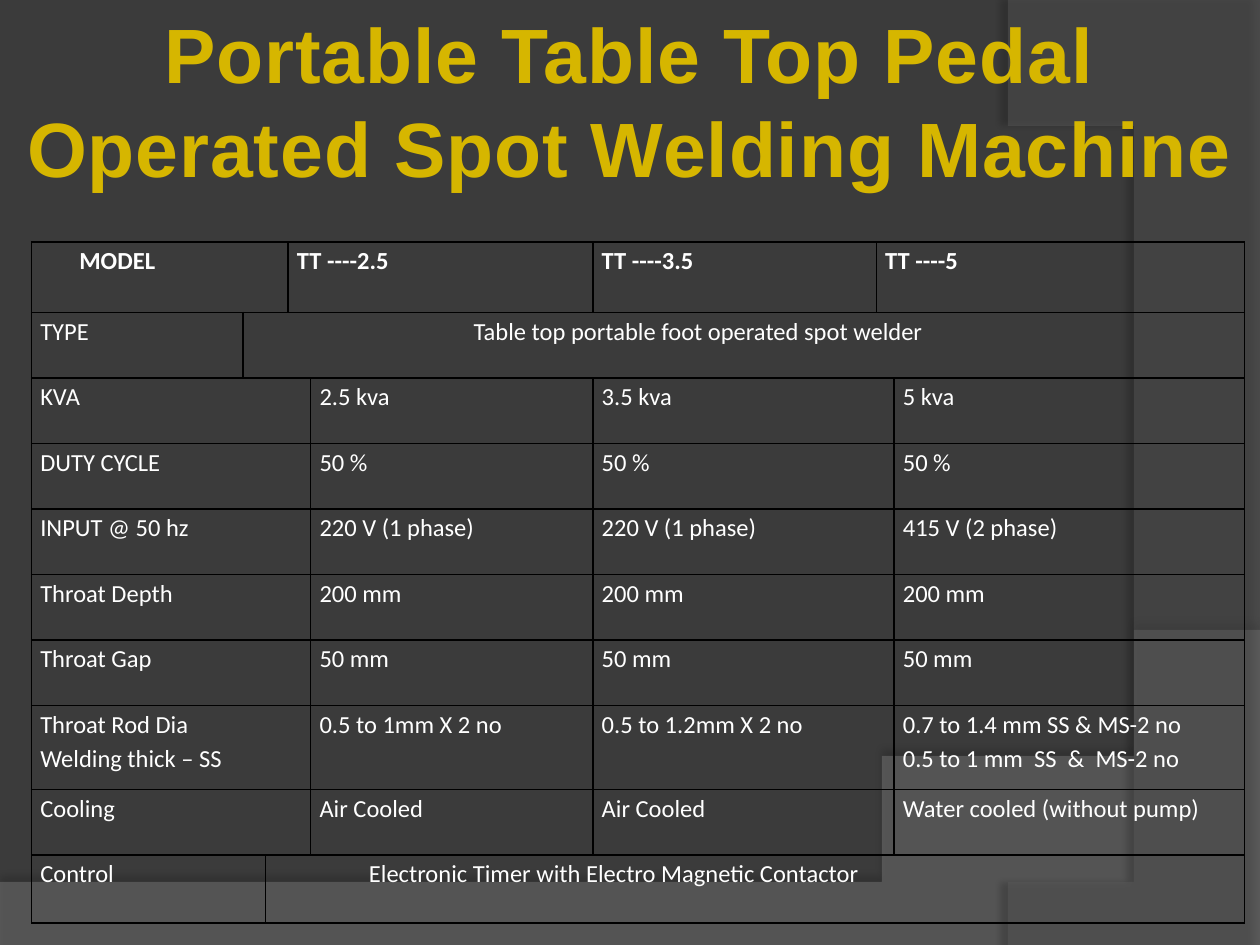
import lxml.etree
import pptx
import pptx.dml.color
import pptx.enum.text
import pptx.oxml
import pptx.oxml.ns
import pptx.util

Inches = pptx.util.Inches
Pt = pptx.util.Pt

COLORS = {
    "background": "3B3B3B",
    "wave": "7F7F7F",
    "arc": "5E5E5E",
    "title_top": "D6B600",
    "title_bottom": "978100",
    "text": "FFFFFF",
    "line": "000000",
}

COLUMN_WIDTHS = [1.68, 0.14, 0.14, 0.14, 2.24, 2.25, 0.14, 2.78]
ROW_HEIGHTS = [0.56] + [0.52] * 6 + [0.67, 0.52, 0.54]
BODY_SPANS = [4, 1, 2, 1]

# Each row: column spans, cell texts, indent of the indented cell, its position
ROWS = [
    ([3, 2, 1, 2], ["MODEL", "TT ----2.5", "TT ----3.5", "TT ----5"], {0: 0.31}),
    ([1, 7], ["TYPE", "Table top portable foot operated spot welder"], {1: 1.76}),
    (BODY_SPANS, ["KVA", "2.5 kva", "3.5 kva", "5 kva"], {}),
    (BODY_SPANS, ["DUTY CYCLE", "50 %", "50 %", "50 %"], {}),
    (BODY_SPANS, ["INPUT @ 50 hz", "220 V (1 phase)", "220 V (1 phase)",
                  "415 V (2 phase)"], {}),
    (BODY_SPANS, ["Throat Depth", "200 mm", "200 mm", "200 mm"], {}),
    (BODY_SPANS, ["Throat Gap", "50 mm", "50 mm", "50 mm"], {}),
    (BODY_SPANS, ["Throat Rod Dia\nWelding thick – SS", "0.5 to 1mm X 2 no",
                  "0.5 to 1.2mm X 2 no",
                  "0.7 to 1.4 mm SS & MS-2 no\n0.5 to 1 mm  SS  &  MS-2 no"], {}),
    (BODY_SPANS, ["Cooling", "Air Cooled", "Air Cooled",
                  "Water cooled (without pump)"], {}),
    ([2, 6], ["Control", "Electronic Timer with Electro Magnetic Contactor"],
     {1: 0.75}),
]


def rgb(name):
    return pptx.dml.color.RGBColor.from_string(COLORS[name])


def child(parent, tag, **attributes):
    element = lxml.etree.SubElement(parent, pptx.oxml.ns.qn(tag))
    for key, value in attributes.items():
        element.set(key, str(value))
    return element


def curve(start, control_1, control_2, end, steps=60):
    """Points along a cubic curve, without its start."""
    points = []
    for step in range(1, steps + 1):
        t = step / steps
        weights = ((1 - t) ** 3, 3 * t * (1 - t) ** 2, 3 * t * t * (1 - t), t ** 3)
        corners = (start, control_1, control_2, end)
        points.append(tuple(sum(w * c[axis] for w, c in zip(weights, corners))
                            for axis in (0, 1)))
    return points


def write(frame, text, font="Calibri", size=14, bold=False, color="text",
          align=None, spacing=1.15, indent=0):
    """Fill a text frame, one paragraph a line, and return its spans."""
    spans = []
    for index, line in enumerate(text.split("\n")):
        para = frame.paragraphs[0] if index == 0 else frame.add_paragraph()
        para.alignment = align
        para.line_spacing = spacing
        if indent:
            properties = para._p.get_or_add_pPr()
            properties.set("marL", str(Inches(indent)))
            properties.set("indent", "0")
        span = para.add_run()
        span.text = line
        span.font.name = font
        span.font.size = Pt(size)
        span.font.bold = bold
        span.font.color.rgb = rgb(color)
        spans.append(span)
    return spans


class SlideBuilder:
    def __init__(self, page):
        self.page = page
        page.background.fill.solid()
        page.background.fill.fore_color.rgb = rgb("background")

    def backdrop(self, points, color, opacity, shadow_opacity, distance, angle):
        """A see-through outline with a soft shadow."""
        builder = self.page.shapes.build_freeform(
            *points[0], scale=Inches(1))
        builder.add_line_segments(points[1:], close=True)
        shape = builder.convert_to_shape()
        shape.shadow.inherit = False
        shape.line.fill.background()
        shape.fill.solid()
        shape.fill.fore_color.rgb = rgb(color)
        properties = shape._element.spPr
        fill_color = properties.find(".//" + pptx.oxml.ns.qn("a:srgbClr"))
        child(fill_color, "a:alpha", val=opacity * 1000)
        effects = properties.find(pptx.oxml.ns.qn("a:effectLst"))
        shadow = child(effects, "a:outerShdw", blurRad=Pt(4), dist=Pt(distance),
                       dir=angle * 60000, algn="ctr", rotWithShape=0)
        shadow_color = child(shadow, "a:srgbClr", val=COLORS["line"])
        child(shadow_color, "a:alpha", val=shadow_opacity * 1000)

    def title(self, text, left, top, width, height):
        box = self.page.shapes.add_textbox(
            Inches(left), Inches(top), Inches(width), Inches(height))
        box.text_frame.word_wrap = True
        box.text_frame.auto_size = pptx.enum.text.MSO_AUTO_SIZE.SHAPE_TO_FIT_TEXT
        span = write(box.text_frame, text, font="Arial", size=44, bold=True,
                     color="title_top", spacing=Pt(53.2),
                     align=pptx.enum.text.PP_ALIGN.CENTER)[0]
        fill = span.font.fill
        fill.gradient()
        fill.gradient_angle = 270
        stops = zip(fill.gradient_stops, (0.25, 1), ("title_top", "title_bottom"))
        for stop, position, color in stops:
            stop.position = position
            stop.color.rgb = rgb(color)
        span.font._element.set("spc", "50")

    def table(self, left, top):
        frame = self.page.shapes.add_table(
            len(ROWS), len(COLUMN_WIDTHS), Inches(left), Inches(top),
            Inches(sum(COLUMN_WIDTHS)), Inches(sum(ROW_HEIGHTS)))
        table = frame.table
        table.first_row = table.horz_banding = False
        for column, width in zip(table.columns, COLUMN_WIDTHS):
            column.width = Inches(width)
        for row, height in zip(table.rows, ROW_HEIGHTS):
            row.height = Inches(height)
        for cell in table.iter_cells():
            self.cell_style(cell)
        for row, (spans, texts, indents) in enumerate(ROWS):
            column = 0
            for index, (span, text) in enumerate(zip(spans, texts)):
                cell = table.cell(row, column)
                column += span
                if span > 1:
                    cell.merge(table.cell(row, column - 1))
                write(cell.text_frame, text, bold=row == 0,
                      indent=indents.get(index, 0))

    def cell_style(self, cell):
        cell.margin_left = cell.margin_right = Inches(0.07)
        cell.margin_top = cell.margin_bottom = 0
        properties = cell._tc.get_or_add_tcPr()
        for side in ("a:lnL", "a:lnR", "a:lnT", "a:lnB"):
            border = child(properties, side, w=Pt(1))
            child(child(border, "a:solidFill"), "a:srgbClr", val=COLORS["line"])
        cell.fill.background()


def main():
    deck = pptx.Presentation()
    deck.slide_width = Inches(10)
    deck.slide_height = Inches(7.5)
    builder = SlideBuilder(deck.slides.add_slide(deck.slide_layouts[6]))

    # Background curves
    wave = [(0, 7.5), (10, 7.5), (10, 5.2)]
    wave += curve((10, 5.2), (5.59, 7.29), (3.91, 7.19), (0, 7.05))
    builder.backdrop(wave, "wave", 45, 35, 3.5, 270)
    arc = [(10, 0.02), (10, 7.5), (8.21, 7.5)]
    arc += curve((8.21, 7.5), (9.35, 6.19), (10.18, 3), (8, 0))
    builder.backdrop(arc, "arc", 40, 45, 4, 180)

    # Title and specification table
    builder.title("Portable Table Top Pedal Operated Spot Welding Machine",
                  0, 0, 10, 1.58)
    builder.table(0.25, 1.92)

    deck.save("out.pptx")


if __name__ == "__main__":
    main()
